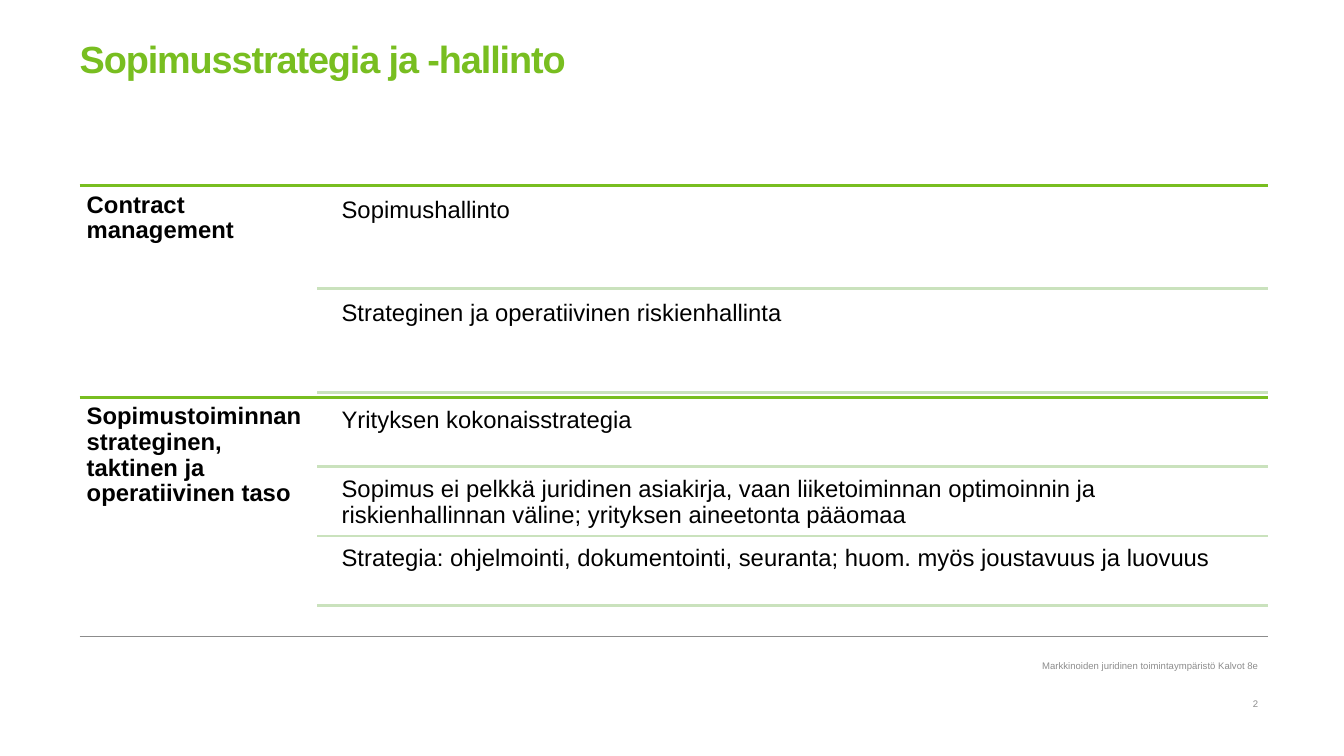
from lxml.etree import SubElement
from pptx import Presentation
from pptx.dml.color import RGBColor
from pptx.enum.shapes import MSO_CONNECTOR
from pptx.enum.text import MSO_ANCHOR, MSO_AUTO_SIZE, PP_ALIGN
from pptx.oxml.ns import qn
from pptx.util import Inches, Pt

GREEN = RGBColor(0x78, 0xBE, 0x20)
PALE_GREEN = RGBColor(0xCA, 0xE2, 0xBD)
BLACK = RGBColor(0, 0, 0)
GRAY = RGBColor(0x8C, 0x8C, 0x8C)

SLIDE_WIDTH, SLIDE_HEIGHT = 13.33, 7.5
LEFT, RIGHT = 0.79, 12.58
CONTENT_WIDTH = RIGHT - LEFT
HEADING_WIDTH = CONTENT_WIDTH / 5
ROW_INDENT = 0.17
SECTIONS_TOP, SECTION_HEIGHT = 1.84, 2.1
GAP_SHARE = 0.05  # gap between rows as a share of row height

TITLE_FONT = {"name": "Arial", "size": Pt(27), "bold": True}
HEADING_FONT = {"name": "Arial", "size": Pt(17), "bold": True}
ROW_FONT = {"name": "Arial", "size": Pt(17), "bold": False}
FOOTER_FONT = {"name": "Arial", "size": Pt(6.8), "bold": False}
SECTION_PARAGRAPH = {"line_spacing": 0.9, "alignment": PP_ALIGN.LEFT}

SECTIONS = [
    ("Contract management",
     ["Sopimushallinto",
      "Strateginen ja operatiivinen riskienhallinta"]),
    ("Sopimustoiminnan strateginen, taktinen ja operatiivinen taso",
     ["Yrityksen kokonaisstrategia",
      "Sopimus ei pelkkä juridinen asiakirja, vaan liiketoiminnan optimoinnin "
      "ja riskienhallinnan väline; yrityksen aineetonta pääomaa",
      "Strategia: ohjelmointi, dokumentointi, seuranta; "
      "huom. myös joustavuus ja luovuus"]),
]


def set_values(target, values):
    for name, value in values.items():
        setattr(target, name, value)


def write_text(shape, text, font, color, margins, anchor, paragraph_format):
    """Fill a shape with one formatted paragraph; margins are left, top, right, bottom."""
    frame = shape.text_frame
    sides = ("margin_left", "margin_top", "margin_right", "margin_bottom")
    set_values(frame, dict(zip(sides, map(Inches, margins))))
    set_values(frame, {"word_wrap": True, "auto_size": MSO_AUTO_SIZE.NONE,
                       "vertical_anchor": anchor})
    paragraph = frame.paragraphs[0]
    set_values(paragraph, paragraph_format)
    run = paragraph.add_run()
    run.text = text
    set_values(run.font, font)
    run.font.color.rgb = color
    return run


def add_rule(slide, left, top, color, width):
    """Draw a horizontal line from left to the right margin."""
    rule = slide.shapes.add_connector(
        MSO_CONNECTOR.STRAIGHT, Inches(left), Inches(top), Inches(RIGHT), Inches(top))
    rule.line.color.rgb = color
    rule.line.width = Pt(width)
    SubElement(rule._element.spPr, qn("a:effectLst"))


def add_text(slide, box, *text_format):
    shape = slide.shapes.add_textbox(*map(Inches, box))
    write_text(shape, *text_format)


def add_title(slide, text):
    title = slide.shapes.title
    box = (LEFT, 0.42, CONTENT_WIDTH, 1.31)
    set_values(title, dict(zip(("left", "top", "width", "height"), map(Inches, box))))
    run = write_text(title, text, TITLE_FONT, GREEN, (0, 0, 0, 0), MSO_ANCHOR.TOP,
                     {"line_spacing": 0.85, "alignment": PP_ALIGN.LEFT})
    run._r.get_or_add_rPr().set("spc", "-80")


def add_section(slide, top, heading, rows):
    """Place a heading beside equal rows, each closed by a pale line."""
    margins = (0.07,) * 4
    rows_left = LEFT + HEADING_WIDTH
    text_left = rows_left + ROW_INDENT
    row_height = SECTION_HEIGHT / (len(rows) * (1 + GAP_SHARE) + GAP_SHARE)
    gap = row_height * GAP_SHARE

    add_rule(slide, LEFT, top, GREEN, 2)
    add_text(slide, (LEFT, top, HEADING_WIDTH, SECTION_HEIGHT), heading, HEADING_FONT,
             BLACK, margins, MSO_ANCHOR.TOP, SECTION_PARAGRAPH)
    for index, text in enumerate(rows):
        row_top = top + gap + index * (row_height + gap)
        add_text(slide, (text_left, row_top, RIGHT - text_left, row_height), text,
                 ROW_FONT, BLACK, margins, MSO_ANCHOR.TOP, SECTION_PARAGRAPH)
        add_rule(slide, rows_left, row_top + row_height, PALE_GREEN, 2)


def add_footer(slide, top, text):
    add_text(slide, (7.2, top, 5.28, 0.18), text, FOOTER_FONT, GRAY,
             (0.1, 0.05, 0, 0.05), MSO_ANCHOR.MIDDLE, {"alignment": PP_ALIGN.RIGHT})


def main():
    presentation = Presentation()
    presentation.slide_width = Inches(SLIDE_WIDTH)
    presentation.slide_height = Inches(SLIDE_HEIGHT)
    slide = presentation.slides.add_slide(presentation.slide_layouts.get_by_name("Title Only"))

    add_title(slide, "Sopimusstrategia ja -hallinto")
    for index, (heading, rows) in enumerate(SECTIONS):
        add_section(slide, SECTIONS_TOP + index * SECTION_HEIGHT, heading, rows)
    add_rule(slide, LEFT, 6.31, GRAY, 0.75)
    add_footer(slide, 6.51, "Markkinoiden juridinen toimintaympäristö Kalvot 8e")
    add_footer(slide, 6.89, "2")
    presentation.save("out.pptx")


if __name__ == "__main__":
    main()
